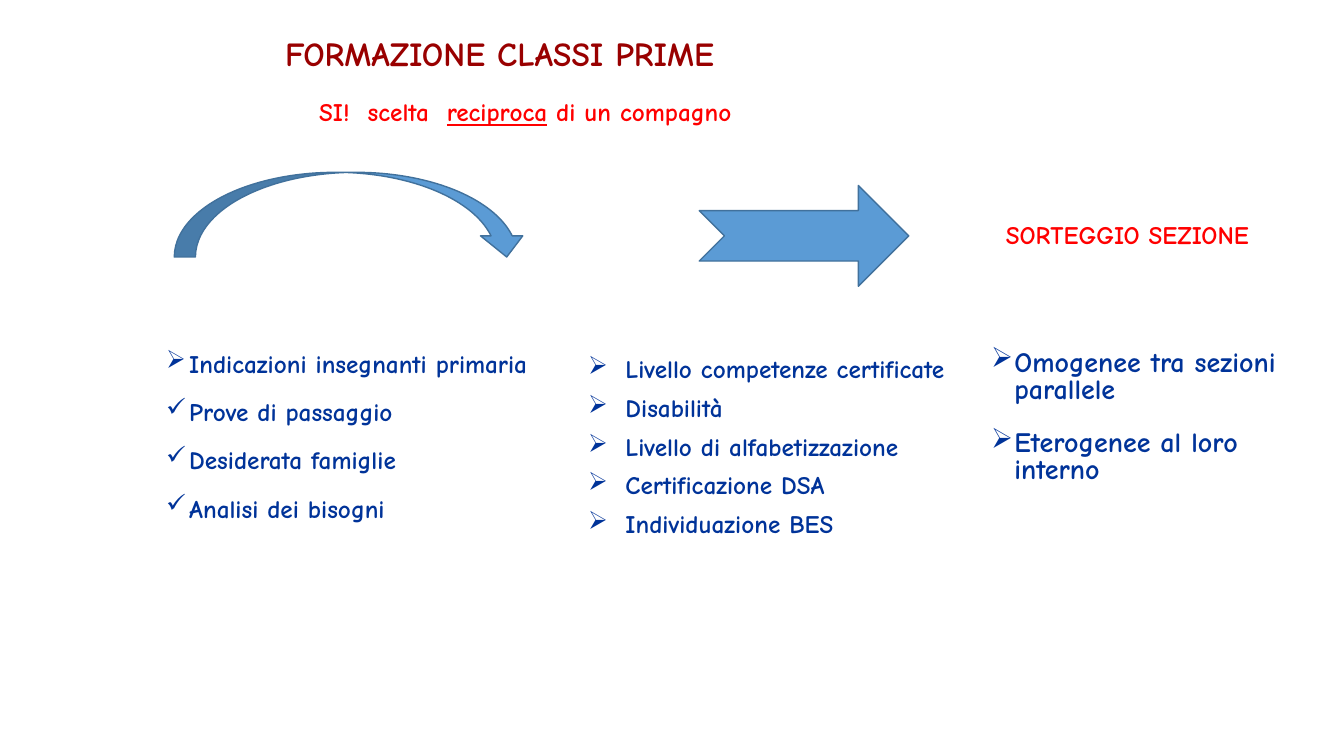
from lxml import etree
from pptx import Presentation
from pptx.dml.color import RGBColor
from pptx.enum.shapes import MSO_SHAPE as SHAPE
from pptx.enum.text import MSO_ANCHOR as ANCHOR, PP_ALIGN as ALIGN
from pptx.oxml.ns import qn
from pptx.util import Inches, Pt

COLORS = {"title": "990000", "accent": "FF0000", "list": "003399",
          "arrow": "5B9BD5", "outline": "41719C"}
FONT = "Comic Neue"


def rgb(name):
    return RGBColor.from_string(COLORS[name])


class SlideBuilder:
    def __init__(self, slide):
        self.slide = slide

    def add_run(self, p, text, size, color, underline=None):
        r = p.add_run()
        r.text = text
        r.font.name, r.font.size, r.font.bold = FONT, Pt(size), True
        r.font.color.rgb = rgb(color)
        r.font.underline = underline

    def title(self, box, text):
        sp = self.slide.shapes.title
        sp.left, sp.top, sp.width, sp.height = map(Inches, box)
        tf = sp.text_frame
        tf.vertical_anchor = ANCHOR.TOP
        p = tf.paragraphs[0]
        p.alignment = ALIGN.LEFT
        self.add_run(p, text, 24, "title")

    def text_box(self, box, wrap=True):
        tf = self.slide.shapes.add_textbox(*map(Inches, box)).text_frame
        tf.word_wrap = wrap
        return tf

    def label(self, box, runs, align=ALIGN.LEFT, wrap=True):
        """Add one line of text; runs are (text, underline) pairs."""
        p = self.text_box(box, wrap).paragraphs[0]
        p.alignment = align
        for text, underline in runs:
            self.add_run(p, text, 18, "accent", underline)

    def set_bullet(self, p, char, indent):
        pPr = p._p.get_or_add_pPr()
        pPr.set("marL", str(Inches(indent)))
        pPr.set("indent", str(-Inches(indent)))
        bu_clr = etree.SubElement(pPr, qn("a:buClr"))
        etree.SubElement(bu_clr, qn("a:srgbClr"), val=COLORS["list"])
        etree.SubElement(pPr, qn("a:buChar"), char=char)

    def bullets(self, box, items, size, indent, gap, spacing=None):
        """Add a list; items are (bullet, text) pairs, gap is in points."""
        tf = self.text_box(box)
        for i, (char, text) in enumerate(items):
            p = tf.add_paragraph() if i else tf.paragraphs[0]
            self.set_bullet(p, char, indent)
            if i:
                p.space_before = Pt(gap)
            p.line_spacing = spacing
            self.add_run(p, text, size, "list")

    def arrow(self, preset, box):
        sp = self.slide.shapes.add_shape(preset, *map(Inches, box))
        sp.shadow.inherit = False
        sp.fill.solid()
        sp.fill.fore_color.rgb = rgb("arrow")
        sp.line.color.rgb = rgb("outline")
        sp.line.width = Pt(1)


def main():
    prs = Presentation()
    prs.slide_width, prs.slide_height = Inches(13.34), Inches(7.5)
    s = SlideBuilder(prs.slides.add_slide(prs.slide_layouts[5]))

    s.title((2.73, 0.28, 5.94, 0.5), "FORMAZIONE CLASSI PRIME")
    s.label((3.07, 0.91, 4.75, 0.4),
            [("SI!  scelta  ", None), ("reciproca", True), (" di un compagno", None)],
            wrap=False)
    s.arrow(SHAPE.CURVED_DOWN_ARROW, (1.73, 1.71, 3.51, 0.84))
    s.arrow(SHAPE.NOTCHED_RIGHT_ARROW, (6.94, 1.84, 2.08, 1))
    s.label((9.58, 2.13, 3.31, 0.4), [("SORTEGGIO SEZIONE ", None)], ALIGN.CENTER)

    s.bullets((1.55, 3.46, 4.73, 1.84),
              [("➢", "Indicazioni insegnanti primaria"),
               ("✓", "Prove di passaggio"),
               ("✓", "Desiderata famiglie"),
               ("✓", "Analisi dei bisogni")],
              size=18, indent=0.23, gap=17.3, spacing=0.8)
    s.bullets((5.74, 3.46, 4.2, 2.24),
              [("➢", text) for text in (
                  "Livello competenze certificate", "Disabilità",
                  "Livello di alfabetizzazione", "Certificazione DSA",
                  "Individuazione BES")],
              size=18, indent=0.37, gap=6)
    s.bullets((9.74, 3.43, 3.15, 1.97),
              [("➢", "Omogenee tra sezioni parallele"),
               ("➢", "Eterogenee al loro interno")],
              size=20, indent=0.23, gap=19.2, spacing=0.8)

    prs.save("out.pptx")


if __name__ == "__main__":
    main()
